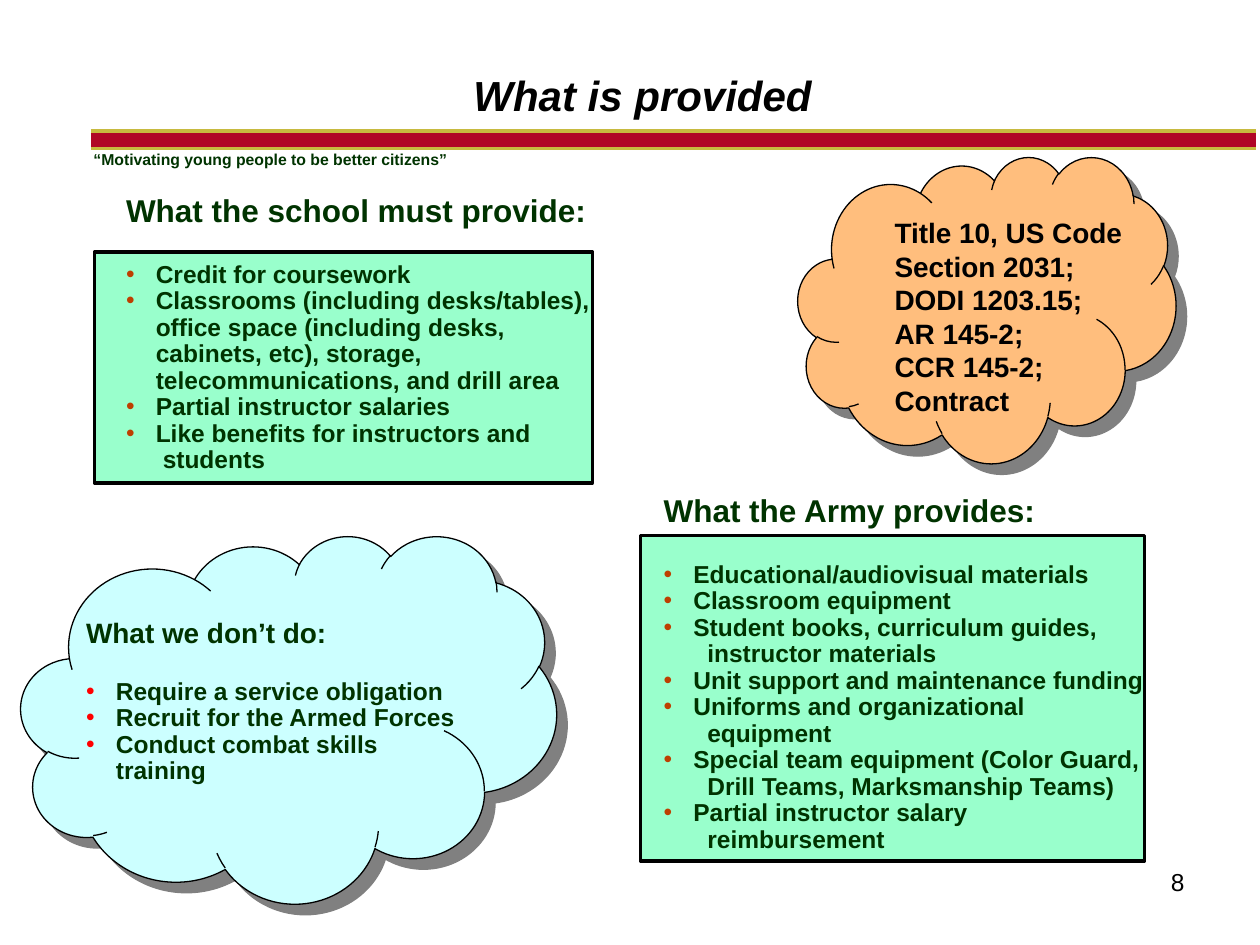
from lxml import etree
from pptx import Presentation
from pptx.dml.color import RGBColor
from pptx.enum.shapes import MSO_CONNECTOR, MSO_SHAPE
from pptx.enum.text import MSO_ANCHOR, MSO_AUTO_SIZE, PP_ALIGN
from pptx.oxml.ns import qn
from pptx.util import Pt

STRAIGHT = MSO_CONNECTOR.STRAIGHT
CLOUD, RECTANGLE = MSO_SHAPE.CLOUD, MSO_SHAPE.RECTANGLE
TOP, MIDDLE = MSO_ANCHOR.TOP, MSO_ANCHOR.MIDDLE
LEFT, CENTER, RIGHT = PP_ALIGN.LEFT, PP_ALIGN.CENTER, PP_ALIGN.RIGHT

FONT = "Arial"
BLACK, GREEN, MINT, RUST = "000000", "003300", "99FFCC", "BE3F00"
HANGING = 17
COMPARISON_LAYOUT = 4

SCHOOL_ITEMS = [
    "Credit for coursework",
    "Classrooms (including desks/tables), office space (including desks, "
    "cabinets, etc), storage, telecommunications, and drill area",
    "Partial instructor salaries",
    "Like benefits for instructors and\n\tstudents",
]
ARMY_ITEMS = [
    "Educational/audiovisual materials",
    "Classroom equipment",
    "Student books, curriculum guides,\n\tinstructor materials",
    "Unit support and maintenance funding",
    "Uniforms and organizational\n\tequipment",
    "Special team equipment (Color Guard,\n\tDrill Teams, Marksmanship Teams)",
    "Partial instructor salary\n\treimbursement",
]
EXCLUDED_ITEMS = [
    "Require a service obligation",
    "Recruit for the Armed Forces",
    "Conduct combat skills training",
]
REFERENCES = ["Title 10, US Code", "Section 2031;", "DODI 1203.15;",
              "AR 145-2;", "CCR 145-2;", "Contract"]


def color(value):
    return RGBColor.from_string(value)


def place(shape, box):
    shape.left, shape.top, shape.width, shape.height = (Pt(n) for n in box)


def bring_to_front(shape):
    shape.element.getparent().append(shape.element)


def prepare_frame(shape, anchor=TOP, side_inset=7.2, wrap=True):
    frame = shape.text_frame
    frame.auto_size = MSO_AUTO_SIZE.NONE
    frame.word_wrap = wrap
    frame.vertical_anchor = anchor
    frame.margin_left = frame.margin_right = Pt(side_inset)
    frame.margin_top = frame.margin_bottom = Pt(3.6)
    return frame


def next_paragraph(frame, is_first):
    return frame.paragraphs[0] if is_first else frame.add_paragraph()


def set_bullet(paragraph, bullet_color=None, tab=None):
    """Give a hanging bullet, or none when no colour is passed."""
    properties = paragraph._p.get_or_add_pPr()
    margin = Pt(HANGING) if bullet_color else 0
    properties.set("marL", str(margin))
    properties.set("indent", str(-margin))
    if not bullet_color:
        etree.SubElement(properties, qn("a:buNone"))
        return
    holder = etree.SubElement(properties, qn("a:buClr"))
    etree.SubElement(holder, qn("a:srgbClr"), val=bullet_color)
    etree.SubElement(properties, qn("a:buFont"), typeface=FONT)
    etree.SubElement(properties, qn("a:buChar"), char="•")
    if tab:
        tabs = etree.SubElement(properties, qn("a:tabLst"))
        etree.SubElement(tabs, qn("a:tab"), pos=str(Pt(tab)), algn="l")


def write(paragraph, text, size, text_color, bold=True, italic=False,
          spacing=1.0, before=0, align=LEFT):
    paragraph.alignment = align
    paragraph.line_spacing = spacing
    paragraph.space_before = Pt(before)
    for number, line in enumerate(text.split("\n")):
        if number:
            paragraph.add_line_break()
        run = paragraph.add_run()
        run.text = line
        font = run.font
        font.name, font.size = FONT, Pt(size)
        font.bold, font.italic = bold, italic
        font.color.rgb = color(text_color)


def add_panel(slide, preset, box, fill, line_width):
    shape = slide.shapes.add_shape(preset, *(Pt(n) for n in box))
    shape.shadow.inherit = False
    shape.fill.solid()
    shape.fill.fore_color.rgb = color(fill)
    shape.line.color.rgb = color(BLACK)
    shape.line.width = Pt(line_width)
    return shape


def add_cloud(slide, box, fill):
    cloud = add_panel(slide, CLOUD, box, fill, 0.75)
    effects = cloud.element.spPr.find(qn("a:effectLst"))
    shadow = etree.SubElement(effects, qn("a:outerShdw"), dist=str(Pt(8.5)),
                              dir="2700000", algn="ctr", rotWithShape="0")
    etree.SubElement(shadow, qn("a:srgbClr"), val="808080")


def fill_list(placeholder, box, heading, items, size, bullet_color, tab=None):
    """Write a heading and its bullets, one heading line apart."""
    place(placeholder, box)
    bring_to_front(placeholder)
    frame = prepare_frame(placeholder)
    set_bullet(frame.paragraphs[0])
    write(frame.paragraphs[0], heading, size, GREEN, spacing=0.9)
    for number, item in enumerate(items):
        paragraph = frame.add_paragraph()
        set_bullet(paragraph, bullet_color, tab)
        write(paragraph, item, 14, GREEN, spacing=0.9,
              before=0 if number else size * 1.04)


def fill_references(placeholder, box):
    place(placeholder, box)
    bring_to_front(placeholder)
    frame = prepare_frame(placeholder, wrap=False)
    for number, reference in enumerate(REFERENCES):
        paragraph = next_paragraph(frame, number == 0)
        set_bullet(paragraph)
        write(paragraph, reference, 16, BLACK)


def fill_title(title, box):
    place(title, box)
    frame = prepare_frame(title, MIDDLE)
    write(frame.paragraphs[0], "What is provided", 24, BLACK, italic=True,
          spacing=0.75, align=CENTER)


def add_banner(slide, left, right, middle):
    """Draw the gold-edged red band with the motto under it."""
    for line_color, width in (("C7BA3F", 12), ("B00626", 8.25)):
        band = slide.shapes.add_connector(
            STRAIGHT, Pt(left), Pt(middle), Pt(right), Pt(middle))
        band.line.color.rgb = color(line_color)
        band.line.width = Pt(width)
        etree.SubElement(band.element.spPr, qn("a:effectLst"))
    motto = slide.shapes.add_textbox(
        Pt(left + 1.4), Pt(middle + 4.3), Pt(216), Pt(16))
    frame = prepare_frame(motto, side_inset=0)
    write(frame.paragraphs[0], "“Motivating young people to be better citizens”",
          9, GREEN, spacing=0.8)


def add_page_number(slide, box):
    number = slide.shapes.add_textbox(*(Pt(n) for n in box))
    frame = prepare_frame(number)
    write(frame.paragraphs[0], "8", 14, BLACK, bold=False, align=RIGHT)


def main():
    presentation = Presentation()
    presentation.slide_width, presentation.slide_height = Pt(720), Pt(540)
    layout = presentation.slide_layouts[COMPARISON_LAYOUT]
    slide = presentation.slides.add_slide(layout)
    title, school, army, excluded, references = slide.placeholders

    add_banner(slide, 52, 718, 80)
    add_page_number(slide, (516, 492, 168, 37))
    add_cloud(slide, (12, 306, 306, 210), "CCFFFF")
    add_panel(slide, RECTANGLE, (54, 144, 284.5, 132), MINT, 2)
    fill_list(school, (64.8, 108, 283, 167), "What the school must provide:",
              SCHOOL_ITEMS, 18, RUST, tab=21)
    add_panel(slide, RECTANGLE, (366, 306, 288, 186), MINT, 2)
    fill_list(army, (372, 279.5, 300, 212), "What the Army provides:",
              ARMY_ITEMS, 18, RUST, tab=25)
    fill_list(excluded, (42, 350.5, 234, 87), "What we don’t do:",
              EXCLUDED_ITEMS, 16, "FF0000")
    add_cloud(slide, (456, 89.5, 216, 175), "FFBE7D")
    fill_references(references, (504, 119.5, 145.5, 142))
    fill_title(title, (59, 36, 616.5, 42))
    presentation.save("out.pptx")


if __name__ == "__main__":
    main()
